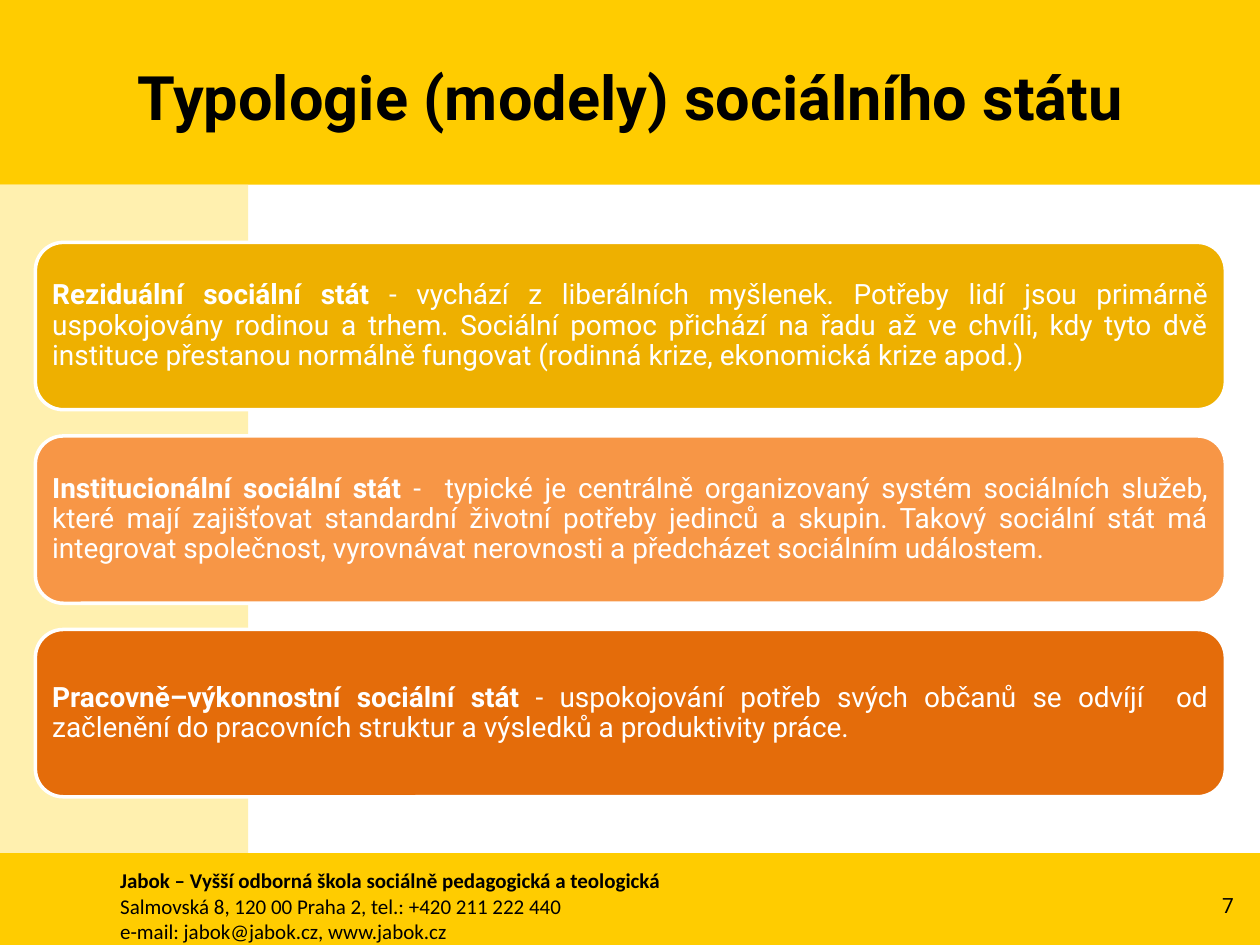
from pptx import Presentation
from pptx.dml.color import RGBColor
from pptx.enum.shapes import MSO_SHAPE
from pptx.enum.text import MSO_ANCHOR, PP_ALIGN
from pptx.util import Pt

RECTANGLE, ROUNDED = MSO_SHAPE.RECTANGLE, MSO_SHAPE.ROUNDED_RECTANGLE
TOP, MIDDLE = MSO_ANCHOR.TOP, MSO_ANCHOR.MIDDLE
LEFT, CENTER = PP_ALIGN.LEFT, PP_ALIGN.CENTER
RIGHT, JUSTIFY = PP_ALIGN.RIGHT, PP_ALIGN.JUSTIFY

COLORS = {
    "band": "FFCC00", "side": "FFF0AF", "black": "000000", "white": "FFFFFF",
    "residual": "EEB000", "institutional": "F79646", "performance": "E46C0A",
}

TITLE = "Typologie (modely) sociálního státu"
MODELS = [
    ("residual", "Reziduální sociální stát ",
     "- vychází z liberálních myšlenek. Potřeby lidí jsou primárně uspokojovány "
     "rodinou a trhem. Sociální pomoc přichází na řadu až ve chvíli, kdy tyto dvě "
     "instituce přestanou normálně fungovat (rodinná krize, ekonomická krize apod.)"),
    ("institutional", "Institucionální sociální stát ",
     "-  typické je centrálně organizovaný systém sociálních služeb, které mají "
     "zajišťovat standardní životní potřeby jedinců a skupin. Takový sociální stát má "
     "integrovat společnost, vyrovnávat nerovnosti a předcházet sociálním událostem. "),
    ("performance", "Pracovně–výkonnostní sociální stát",
     " - uspokojování potřeb svých občanů se odvíjí  od začlenění do pracovních "
     "struktur a výsledků a produktivity práce."),
]
FOOTER = [
    ("Jabok – Vyšší odborná škola sociálně pedagogická a teologická", True),
    ("Salmovská 8, 120 00 Praha 2, tel.: +420 211 222 440", False),
    ("e-mail: jabok@jabok.cz, www.jabok.cz", False),
]
PAGE_NUMBER = "7"

# Layout in points
WIDTH, HEIGHT = 720, 540
HEADER_HEIGHT, FOOTER_TOP = 105.6, 487.5
SIDE_WIDTH = 141.8
CARD_LEFT, CARD_TOP, CARD_WIDTH, CARD_HEIGHT = 20.2, 138.5, 680, 95.6
CARD_STEP = 110.6
CARD_INSET = 5


def add_block(slide, kind, box, color):
    shape = slide.shapes.add_shape(kind, *map(Pt, box))
    shape.shadow.inherit = False
    shape.fill.solid()
    shape.fill.fore_color.rgb = RGBColor.from_string(COLORS[color])
    shape.line.fill.background()
    return shape


def style(paragraph, size, color, align, font="Roboto", bold=None):
    paragraph.alignment = align
    paragraph.font.name = font
    paragraph.font.size = Pt(size)
    paragraph.font.color.rgb = RGBColor.from_string(COLORS[color])
    paragraph.font.bold = bold


def add_text(slide, box, lines, size, align, anchor, font="Roboto"):
    frame = slide.shapes.add_textbox(*map(Pt, box)).text_frame
    frame.word_wrap = True
    frame.vertical_anchor = anchor
    for index, (text, bold) in enumerate(lines):
        paragraph = frame.add_paragraph() if index else frame.paragraphs[0]
        paragraph.text = text
        style(paragraph, size, "black", align, font, bold)


def add_card(slide, index, color, name, description):
    top = CARD_TOP + index * CARD_STEP
    card = add_block(slide, ROUNDED, (CARD_LEFT, top, CARD_WIDTH, CARD_HEIGHT), color)
    card.line.color.rgb = RGBColor.from_string(COLORS["white"])
    card.line.width = Pt(2)
    frame = card.text_frame
    frame.word_wrap = True
    frame.vertical_anchor = MIDDLE
    frame.margin_left = frame.margin_right = Pt(CARD_INSET)
    frame.margin_top = frame.margin_bottom = Pt(CARD_INSET)
    paragraph = frame.paragraphs[0]
    paragraph.line_spacing = 0.9
    paragraph.space_after = Pt(5.6)
    style(paragraph, 16, "white", JUSTIFY)
    for text, bold in ((name, True), (description, False)):
        run = paragraph.add_run()
        run.text = text
        run.font.bold = bold


def main():
    presentation = Presentation()
    presentation.slide_width, presentation.slide_height = Pt(WIDTH), Pt(HEIGHT)
    slide = presentation.slides.add_slide(presentation.slide_layouts[6])

    # Background bands
    add_block(slide, RECTANGLE, (0, 0, WIDTH, HEADER_HEIGHT), "band")
    add_block(slide, RECTANGLE,
              (0, HEADER_HEIGHT, SIDE_WIDTH, FOOTER_TOP - HEADER_HEIGHT), "side")
    add_block(slide, RECTANGLE, (0, FOOTER_TOP, WIDTH, HEIGHT - FOOTER_TOP), "band")

    # Footer and page number
    add_text(slide, (61.6, 492.5, 590, 47.5), FOOTER, 12, LEFT, TOP, "Calibri")
    add_text(slide, (666.7, 502.6, 45.4, 28.8), [(PAGE_NUMBER, False)], 12, RIGHT, MIDDLE)

    # Title
    add_text(slide, (36.5, 10.1, 648, 90), [(TITLE, True)], 35, CENTER, MIDDLE)

    # Cards of the welfare state models
    for index, model in enumerate(MODELS):
        add_card(slide, index, *model)

    presentation.save("out.pptx")


if __name__ == "__main__":
    main()
